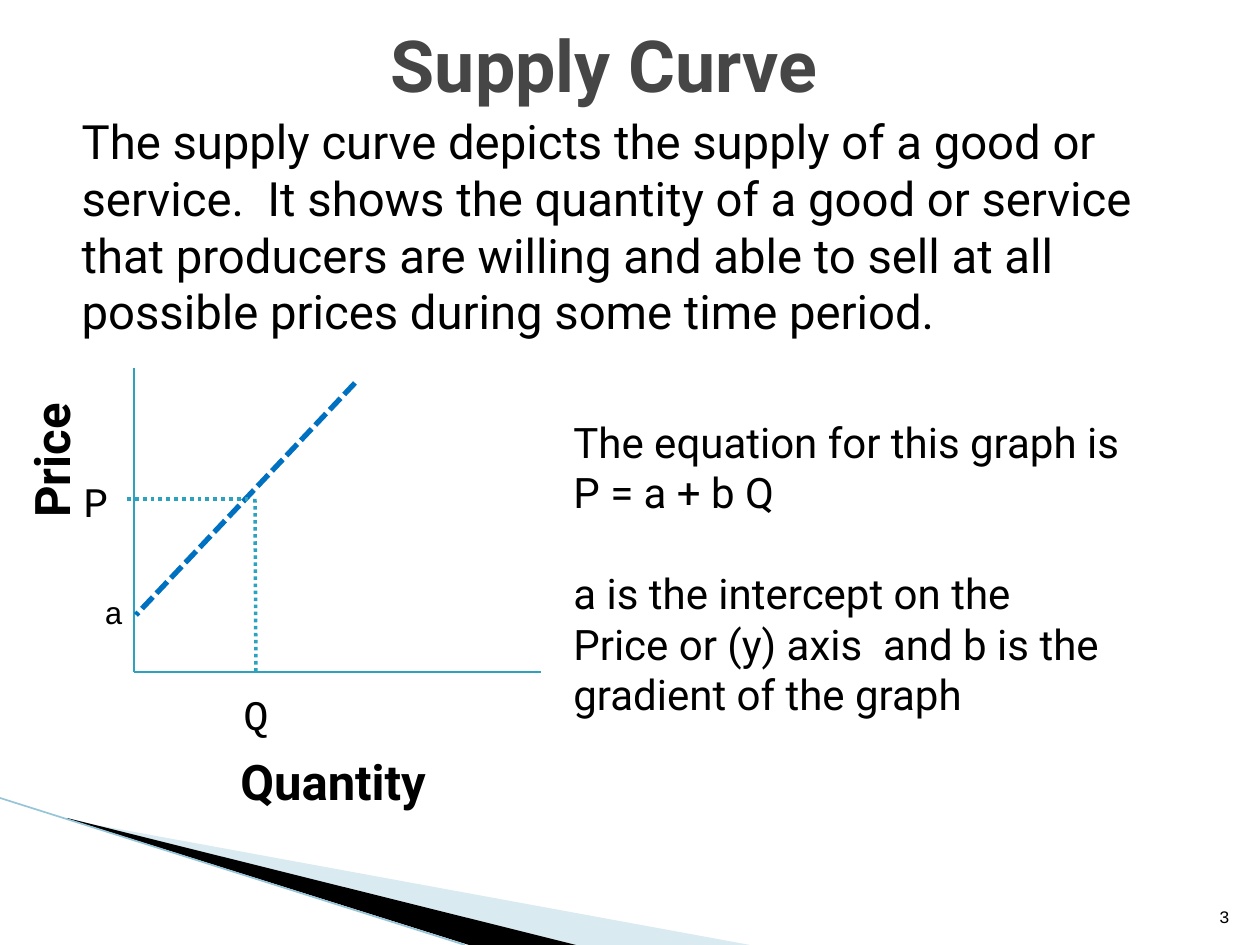
"""Build the supply curve slide with its graph and equation."""
import lxml.etree
import pptx
import pptx.dml.color
import pptx.enum.dml
import pptx.enum.shapes
import pptx.enum.text
import pptx.oxml
import pptx.oxml.ns
import pptx.util

PX = 914400 // 126
qn = pptx.oxml.ns.qn
RGB = pptx.dml.color.RGBColor.from_string
Align = pptx.enum.text.PP_ALIGN
Anchor = pptx.enum.text.MSO_ANCHOR
Dash = pptx.enum.dml.MSO_LINE

THEME = {
    "ink": "000000", "heading": "464646", "axis": "2DA2BF", "supply": "0070C0",
    "sweep": "A0CBDC", "edge": "97C5D8",
    "sans": "Roboto", "mono": "Courier New",
    "title": 41, "body": 27, "label": 28, "equation": 24, "intercept": 18, "number": 10,
}


def write(box, lines, size, font="sans", color="ink", bold=False, align=Align.LEFT, anchor=Anchor.TOP):
    frame = box.text_frame
    for name, value in {"word_wrap": True, "vertical_anchor": anchor,
                        "auto_size": pptx.enum.text.MSO_AUTO_SIZE.NONE}.items():
        setattr(frame, name, value)
    for index, line in enumerate(lines):
        para = frame.add_paragraph() if index else frame.paragraphs[0]
        span = para.add_run()
        span.text = line
        para.alignment = align
        para.space_before = pptx.util.Pt(0)
        look = {"name": THEME[font], "size": pptx.util.Pt(THEME[size]), "bold": bold}
        for name, value in look.items():
            setattr(span.font, name, value)
        span.font.color.rgb = RGB(THEME[color])
    return frame


def draw_line(start, end, color, width, dash=None):
    line = page.shapes.add_connector(
        pptx.enum.shapes.MSO_CONNECTOR.STRAIGHT, *(n * PX for n in start + end))
    line.line.color.rgb = RGB(THEME[color])
    line.line.width = pptx.util.Pt(width)
    if dash:
        line.line.dash_style = dash
    lxml.etree.SubElement(line._element.spPr, qn("a:effectLst"))


deck = pptx.Presentation()
deck.slide_width, deck.slide_height = 1260 * PX, 945 * PX
page = deck.slides.add_slide(deck.slide_layouts[1])
title, body = page.placeholders[0], page.placeholders[1]

sweeps = [
    ("sweep", 40, [(69, 820), (750, 945), (575, 945), (69, 819)]),
    ("ink", 100, [(67, 818), (576, 945), (469, 945), (68, 819)]),
]
for color, opacity, points in sweeps:
    builder = page.shapes.build_freeform(*points[0], scale=PX)
    builder.add_line_segments(points[1:], close=True)
    sweep = builder.convert_to_shape()
    sweep.shadow.inherit = False
    sweep.line.fill.background()
    sweep.fill.solid()
    sweep.fill.fore_color.rgb = RGB(THEME[color])
    if opacity < 100:
        tint = sweep._element.spPr.find(".//" + qn("a:srgbClr"))
        lxml.etree.SubElement(tint, qn("a:alpha")).set("val", str(opacity * 1000))
draw_line((0, 798), (465, 945), "edge", 0.95)

for box, place in [(title, (64, 1, 1081, 125)), (body, (54, 106, 1142, 297))]:
    for name, value in zip(("left", "top", "width", "height"), place):
        setattr(box, name, value * PX)

write(title, ["Supply Curve"], "title", color="heading", bold=True,
      align=Align.CENTER, anchor=Anchor.MIDDLE)

layout = body.text_frame.paragraphs[0]._p.get_or_add_pPr()
layout.set("marL", str(15 * PX))
layout.set("indent", "0")
lxml.etree.SubElement(layout, qn("a:buNone"))
write(body, ["The supply curve depicts the supply of a good or service.  It shows the "
             "quantity of a good or service that producers are willing and able to sell "
             "at all possible prices during some time period."], "body")

graph_lines = [
    ((134, 368), (134, 672), "axis", 0.75, None),
    ((355, 383), (136, 615), "supply", 3, Dash.SQUARE_DOT),
    ((255, 499), (256, 675), "axis", 2, Dash.ROUND_DOT),
    ((127, 499), (251, 499), "axis", 2.25, Dash.ROUND_DOT),
    ((134, 672), (541, 672), "axis", 0.75, None),
]
for graph_line in graph_lines:
    draw_line(*graph_line)

strong = {"bold": True}
labels = [
    (["Price"], (15, 368, 84, 185), "label", {"bold": True, "align": Align.CENTER}),
    (["Quantity"], (228, 745, 255, 72), "label", strong),
    (["Q"], (231, 682, 53, 35), "equation", {"font": "mono"}),
    (["P"], (71, 469, 59, 63), "equation", {"font": "mono"}),
    (["a"], (92, 587, 60, 50), "intercept", {"font": "mono"}),
    (["3"], (1192, 883, 50, 50), "number",
     {"font": "mono", "align": Align.RIGHT, "anchor": Anchor.BOTTOM}),
    (["The equation for this graph is", "P = a + b Q", "a is the intercept on the",
      "Price or (y) axis  and b is the", "gradient of the graph"],
     (561, 410, 587, 369), "equation", {}),
]
frames = {}
for lines, place, size, look in labels:
    box = page.shapes.add_textbox(*(n * PX for n in place))
    frames[lines[0]] = write(box, lines, size, **look)

frames["Price"]._txBody.bodyPr.set("vert", "vert270")
frames["The equation for this graph is"].paragraphs[2].space_before = pptx.util.Pt(29)

deck.save("out.pptx")
